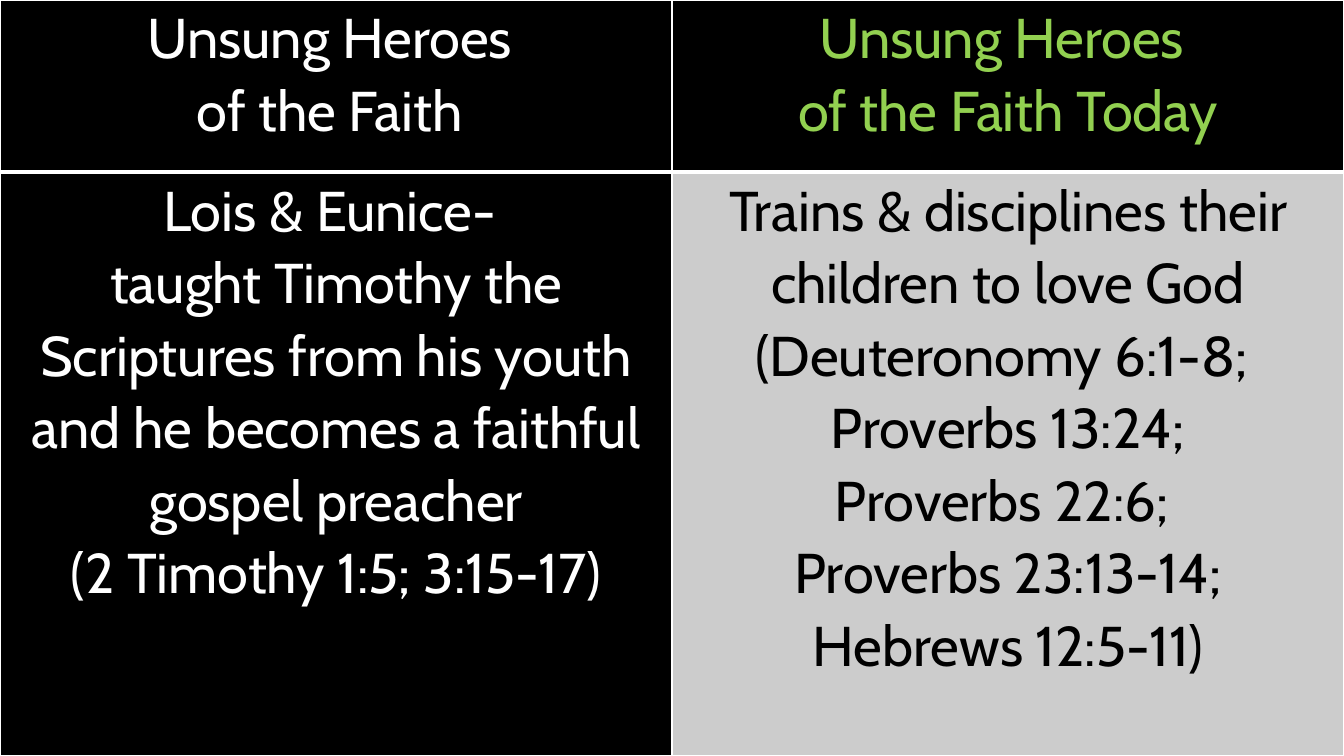
from lxml.etree import SubElement
from pptx import Presentation
from pptx.dml.color import RGBColor
from pptx.enum.text import PP_ALIGN
from pptx.oxml.ns import qn
from pptx.util import Inches, Pt

BLACK = RGBColor(0x00, 0x00, 0x00)
WHITE = RGBColor(0xFF, 0xFF, 0xFF)
GREEN = RGBColor(0x92, 0xD0, 0x50)
GREY = RGBColor(0xCC, 0xCC, 0xCC)

HEADER_BORDERS = {"lnL": 1, "lnR": 1, "lnT": 1, "lnB": 3}
BODY_BORDERS = {"lnL": 1, "lnR": 1, "lnT": 3, "lnB": 1}

ROWS = [
    (1.71, HEADER_BORDERS, [
        (["Unsung Heroes ", "of the Faith "], WHITE, BLACK),
        (["Unsung Heroes ", "of the Faith Today"], GREEN, BLACK),
    ]),
    (5.79, BODY_BORDERS, [
        (["Lois & Eunice- ",
          "taught Timothy the Scriptures from his youth "
          "and he becomes a faithful gospel preacher",
          "(2 Timothy 1:5; 3:15-17)"], WHITE, BLACK),
        (["Trains & disciplines their children to love God",
          "(Deuteronomy 6:1-8; ",
          "Proverbs 13:24;",
          "Proverbs 22:6; ",
          "Proverbs 23:13-14;",
          "Hebrews 12:5-11)"], BLACK, GREY),
    ]),
]


def set_borders(cell, borders):
    """Draw white borders of the given point widths around a cell."""
    properties = cell._tc.get_or_add_tcPr()
    for side, width in borders.items():
        line = SubElement(properties, qn(f"a:{side}"), w=str(Pt(width)))
        fill = SubElement(line, qn("a:solidFill"))
        SubElement(fill, qn("a:srgbClr"), val=str(WHITE))


def fill_cell(cell, lines, text_color, fill_color, borders):
    """Write centred lines into a bordered, filled cell."""
    set_borders(cell, borders)
    cell.fill.solid()
    cell.fill.fore_color.rgb = fill_color
    cell.margin_left = cell.margin_right = Inches(0.07)
    cell.margin_top = cell.margin_bottom = 0
    frame = cell.text_frame
    frame.text = "\n".join(lines)
    for para in frame.paragraphs:
        para.alignment = PP_ALIGN.CENTER
        para.line_spacing = 1.07
        para.font.name = "Cabin"
        para.font.size = Pt(40)
        para.font.bold = False
        para.font.color.rgb = text_color


def add_heroes_table(page, left, top, width, height):
    """Place the two-column comparison of heroes in the given box."""
    table = page.shapes.add_table(len(ROWS), 2, left, top, width, height).table
    for column in table.columns:
        column.width = width // 2
    for row, (row_height, borders, cells) in enumerate(ROWS):
        table.rows[row].height = Inches(row_height)
        for column, (lines, text_color, fill_color) in enumerate(cells):
            fill_cell(table.cell(row, column), lines, text_color, fill_color, borders)


def main():
    """Build and save the deck."""
    deck = Presentation()
    deck.slide_width = Inches(13.33)
    deck.slide_height = Inches(7.5)
    page = deck.slides.add_slide(deck.slide_layouts[6])
    page.background.fill.solid()
    page.background.fill.fore_color.rgb = BLACK
    add_heroes_table(page, 0, 0, deck.slide_width, deck.slide_height)
    deck.save("out.pptx")


if __name__ == "__main__":
    main()
